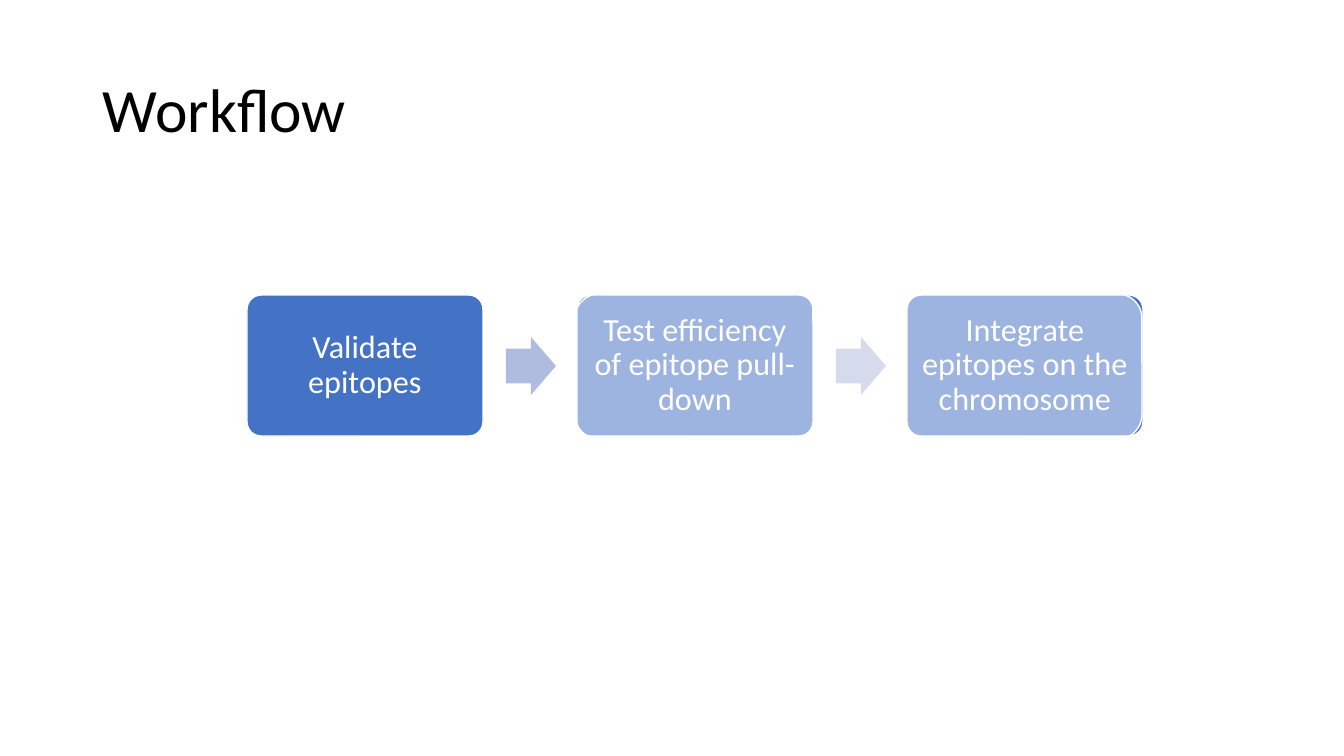
import dataclasses

import lxml.etree
import pptx
import pptx.dml.color
import pptx.enum.shapes
import pptx.enum.text
import pptx.oxml.ns
import pptx.util

SHAPES = pptx.enum.shapes.MSO_SHAPE
ALIGN = pptx.enum.text.PP_ALIGN


@dataclasses.dataclass(frozen=True)
class Theme:
    font: str = "Calibri"
    ink: str = "000000"
    paper: str = "FFFFFF"
    step: str = "4472C4"
    arrow: str = "B0BCDE"
    title_size: int = 44
    step_size: int = 23
    outline: int = 1
    line_spacing: float = 0.9
    veil_opacity: int = 47


def px(length):
    return pptx.util.Emu(round(length * 12192000 / 1344))


def rgb(value):
    return pptx.dml.color.RGBColor.from_string(value)


class WorkflowSlide:
    """Draws the workflow elements on one slide in one theme."""

    def __init__(self, slide, theme):
        self.slide = slide
        self.theme = theme

    def label(self, owner, wording, size, color, align, inset):
        frame = owner.text_frame
        frame_format = {
            "word_wrap": True,
            "vertical_anchor": pptx.enum.text.MSO_ANCHOR.MIDDLE,
            "margin_left": px(inset[0]),
            "margin_right": px(inset[0]),
            "margin_top": px(inset[1]),
            "margin_bottom": px(inset[1]),
        }
        for name, value in frame_format.items():
            setattr(frame, name, value)
        paragraph = frame.paragraphs[0]
        paragraph.alignment = align
        paragraph.line_spacing = self.theme.line_spacing
        run = paragraph.add_run()
        run.text = wording
        for name, value in {"name": self.theme.font, "size": pptx.util.Pt(size)}.items():
            setattr(run.font, name, value)
        run.font.color.rgb = rgb(color)

    def title(self, wording, box):
        heading = self.slide.shapes.add_textbox(*map(px, box))
        self.label(heading, wording, self.theme.title_size, self.theme.ink, ALIGN.LEFT, (10, 5))

    def block(self, kind, box, fill, adjustments=(), outlined=True):
        block = self.slide.shapes.add_shape(kind, *map(px, box))
        block.shadow.inherit = False
        for index, value in enumerate(adjustments):
            block.adjustments[index] = value
        block.fill.solid()
        block.fill.fore_color.rgb = rgb(fill)
        if outlined:
            block.line.color.rgb = rgb(self.theme.paper)
            block.line.width = pptx.util.Pt(self.theme.outline)
        else:
            block.line.fill.background()
        return block

    def step(self, wording, box):
        step = self.block(SHAPES.ROUNDED_RECTANGLE, box, self.theme.step, (0.1,))
        self.label(step, wording, self.theme.step_size, self.theme.paper, ALIGN.CENTER, (10, 10))

    def arrow(self, box):
        self.block(SHAPES.RIGHT_ARROW, box, self.theme.arrow, (0.6, 0.5), outlined=False)

    def veil(self, box):
        veil = self.block(SHAPES.ROUNDED_RECTANGLE, box, self.theme.paper)
        qn = pptx.oxml.ns.qn
        color = veil.element.spPr.find(qn("a:solidFill")).find(qn("a:srgbClr"))
        lxml.etree.SubElement(color, qn("a:alpha"), val=str(self.theme.veil_opacity * 1000))


def main():
    deck = pptx.Presentation()
    deck.slide_width, deck.slide_height = px(1344), px(756)
    workflow = WorkflowSlide(deck.slides.add_slide(deck.slide_layouts[6]), Theme())
    workflow.title("Workflow", (93, 40, 1159, 146))

    steps = (
        "Validate epitopes",
        "Test efficiency of epitope pull-down",
        "Integrate epitopes on the chromosome",
    )
    first_left, pitch = 247, 330
    for index, wording in enumerate(steps):
        left = first_left + index * pitch
        if index:
            workflow.arrow((left - 71, 337, 50, 58))
        workflow.step(wording, (left, 295, 236, 141))
    workflow.veil((575, 294, 567, 145))

    deck.save("out.pptx")


if __name__ == "__main__":
    main()
